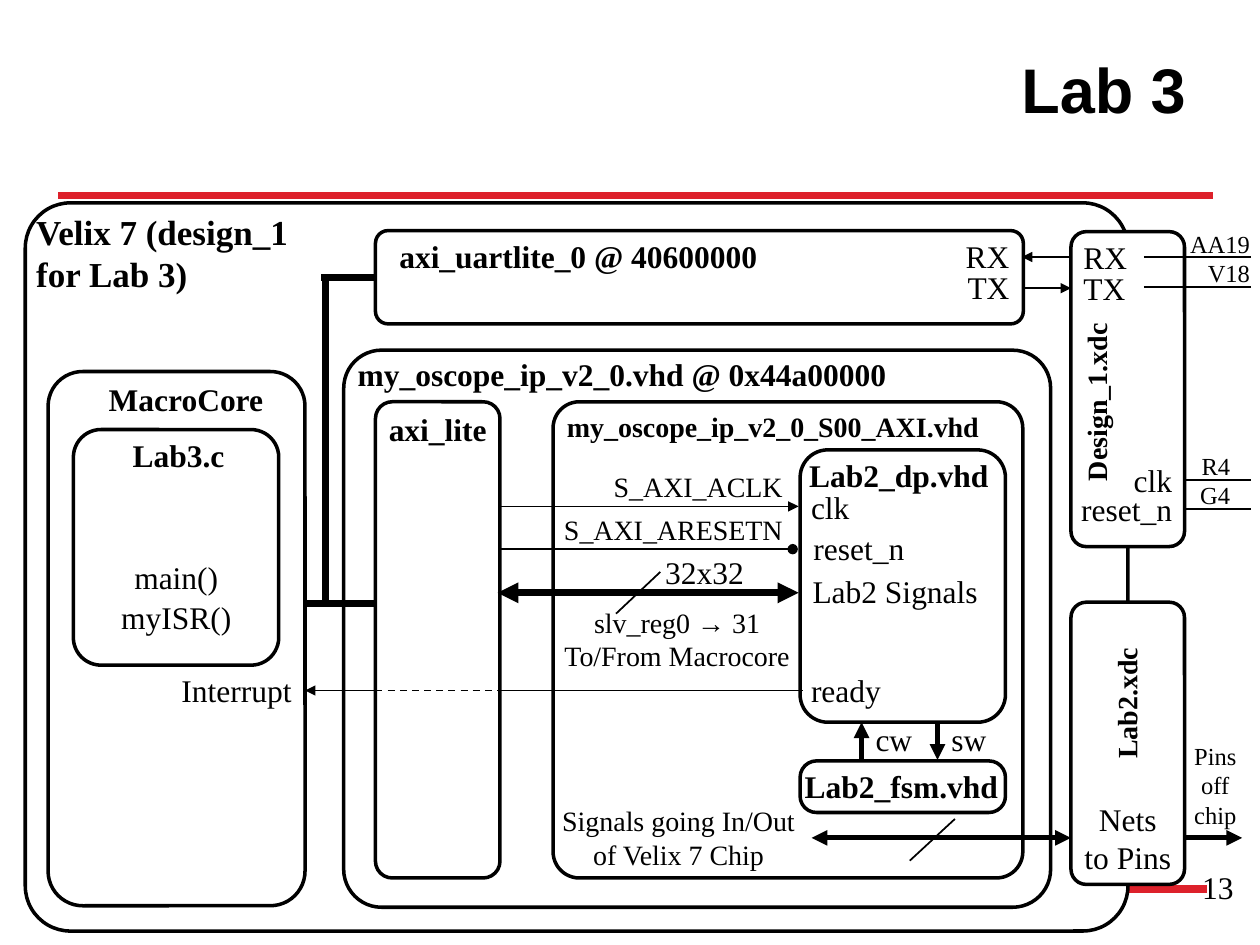
from collections import namedtuple

from pptx import Presentation
from pptx.dml.color import RGBColor
from pptx.enum.dml import MSO_LINE
from pptx.enum.shapes import MSO_CONNECTOR, MSO_SHAPE
from pptx.enum.text import MSO_ANCHOR, PP_ALIGN
from pptx.oxml.ns import qn
from pptx.util import Cm, Pt
from lxml.etree import SubElement

BLACK, WHITE, RED = "000000", "FFFFFF", "DD212B"
ALIGN = {"left": PP_ALIGN.LEFT, "center": PP_ALIGN.CENTER, "right": PP_ALIGN.RIGHT}
LABEL_HEIGHT = 1.02

# All box lengths are in centimetres
Box = namedtuple("Box", "left top width height")


def within(box, x, y, width, height):
    return Box(box.left + x, box.top + y, width, height)


def to_cm(*lengths):
    return [Cm(length) for length in lengths]


def color(hex_string):
    return RGBColor.from_string(hex_string)


def write(frame, text, size=18, bold=False, align="left", font="Times New Roman",
          anchor=MSO_ANCHOR.TOP):
    frame.word_wrap = True
    frame.vertical_anchor = anchor
    for index, line in enumerate(text.split("\n")):
        paragraph = frame.add_paragraph() if index else frame.paragraphs[0]
        paragraph.alignment = ALIGN[align]
        run = paragraph.add_run()
        run.text = line
        run.font.name, run.font.size, run.font.bold = font, Pt(size), bold
        run.font.color.rgb = color(BLACK)


def label(slide, box, x, y, width, text, height=LABEL_HEIGHT, rotation=0, **text_format):
    holder = slide.shapes.add_textbox(*to_cm(*within(box, x, y, width, height)))
    holder.rotation = rotation
    write(holder.text_frame, text, **text_format)


def block(slide, box, rounding=0.135, fill=None):
    outline = slide.shapes.add_shape(MSO_SHAPE.ROUNDED_RECTANGLE, *to_cm(*box))
    outline.adjustments[0] = rounding
    outline.shadow.inherit = False
    if fill:
        outline.fill.solid()
        outline.fill.fore_color.rgb = color(fill)
    else:
        outline.fill.background()
    outline.line.color.rgb = color(BLACK)
    outline.line.width = Pt(2)
    return outline


def wire(slide, box, x1, y1, x2, y2, weight=1, head=None, tail=None, dash=None, ink=BLACK):
    """Draw a line between two points relative to the box; head is at the start."""
    connector = slide.shapes.add_connector(MSO_CONNECTOR.STRAIGHT, *to_cm(
        box.left + x1, box.top + y1, box.left + x2, box.top + y2))
    connector.line.color.rgb = color(ink)
    connector.line.width = Pt(weight)
    if dash:
        connector.line.dash_style = dash
    line_xml = connector.line._get_or_add_ln()
    for tag, kind in (("a:headEnd", head), ("a:tailEnd", tail)):
        if kind:
            SubElement(line_xml, qn(tag), type=kind)
    SubElement(connector._element.spPr, qn("a:effectLst"))
    return connector


def draw_header(slide, box):
    title = slide.shapes.title
    title.left, title.top, title.width, title.height = to_cm(*within(box, 5.31, 0.2, 18.85, 3.18))
    write(title.text_frame, "Lab 3", size=36, bold=True, align="right", font="Arial",
          anchor=MSO_ANCHOR.MIDDLE)
    wire(slide, box, 1.17, 3.94, 24.46, 3.94, weight=4.5, ink=RED)
    wire(slide, box, 1.07, 17.93, 24.33, 17.93, weight=4.5, ink=RED)


def draw_chip(slide, box):
    block(slide, box, rounding=0.062, fill=WHITE)
    label(slide, box, -0.03, 0.03, 6.3, "Velix 7 (design_1 for Lab 3)", height=1.96,
          size=20, bold=True)


def draw_uart(slide, box):
    uart = block(slide, box)
    label(slide, box, 0.23, 0, 10, "axi_uartlite_0 @ 40600000", bold=True)
    for y, port in ((0, "RX"), (0.63, "TX")):
        label(slide, box, 11.56, y, 1.47, port, align="right")
    return uart


def draw_processor(slide, box, uart):
    block(slide, box)
    label(slide, box, 0.66, 0.05, 4.24, "MacroCore", bold=True, align="center")
    program = within(box, 0.51, 1.17, 4.14, 4.75)
    block(slide, program)
    label(slide, program, 0, 0, 4.24, "Lab3.c", bold=True, align="center")
    for y, function in ((2.46, "main()"), (3.27, "myISR()")):
        label(slide, program, 0.69, y, 2.77, function, align="center")
    label(slide, box, 2.39, 5.92, 2.77, "Interrupt", align="right")
    wire(slide, box, 5.2, 4.67, 6.6, 4.67, weight=4)
    wire(slide, box, 5.59, 4.67, 5.59, -1.9, weight=4)
    wire(slide, box, 5.51, -1.9, 6.6, -1.9, weight=4).end_connect(uart, 1)
    wire(slide, box, 5.18, 6.43, 15.21, 6.43, head="triangle")


def draw_peripheral(slide, box):
    block(slide, box, rounding=0.068)
    label(slide, box, 0.03, -0.03, 14.2, "my_oscope_ip_v2_0.vhd @ 0x44a00000", bold=True)
    draw_axi_lite(slide, within(box, 0.64, 1.04, 2.51, 9.6))
    draw_axi_slave(slide, within(box, 4.22, 1.04, 9.47, 9.6))


def draw_axi_lite(slide, box):
    block(slide, box, fill=WHITE)
    label(slide, box, 0, 0.05, box.width, "axi_lite", bold=True, align="center")
    wire(slide, box, 0, 5.82, box.width, 5.82, dash=MSO_LINE.DASH)


def draw_axi_slave(slide, box):
    block(slide, box, rounding=0.056)
    label(slide, box, 0.03, 0.03, 10.2, "my_oscope_ip_v2_0_S00_AXI.vhd", size=16, bold=True)
    for y, signal, end, tip in ((2.11, "S_AXI_ACLK", 4.95, "triangle"),
                                (2.97, "S_AXI_ARESETN", 4.83, "oval")):
        wire(slide, box, -1.07, y, end, y, tail=tip)
        label(slide, box, -0.53, y - 0.87, 5.41, signal, size=16, align="right")
    wire(slide, box, -1.12, 3.85, 4.95, 3.85, weight=4, head="triangle", tail="triangle")
    wire(slide, box, 1.27, 4.27, 2.16, 3.43)
    label(slide, box, 2.01, 2.92, 2.2, "32x32")
    label(slide, box, -0.18, 3.98, 5.36, "slv_reg0 → 31\nTo/From Macrocore", height=1.56,
          size=16, align="center")
    draw_datapath(slide, within(box, 4.98, 0.97, 4.14, 5.49))
    label(slide, box, -0.15, 7.98, 5.36, "Signals going In/Out of Velix 7 Chip",
          height=1.63, size=16, align="center")
    wire(slide, box, 5.21, 8.79, 10.44, 8.79, weight=3, head="triangle", tail="triangle")
    wire(slide, box, 7.19, 9.25, 8.1, 8.41)


def draw_datapath(slide, box):
    """Draw the datapath with the state machine under it."""
    block(slide, box)
    label(slide, box, -0.08, 0, box.width, "Lab2_dp.vhd", bold=True, align="center")
    for x, y, port in ((-0.03, 0.64, "clk"), (0.02, 1.47, "reset_n"),
                       (0, 2.34, "Lab2 Signals"), (-0.03, 4.34, "ready")):
        label(slide, box, x, y, 4.1, port)
    block(slide, within(box, 0, 6.27, box.width, 1.04), rounding=0.319)
    label(slide, box, -0.36, 6.27, 4.8, "Lab2_fsm.vhd", bold=True, align="center")
    for x, word, start, end in ((1.24, "cw", 6.25, 5.49), (2.77, "sw", 5.49, 6.25)):
        wire(slide, box, x, start, x, end, weight=3, tail="triangle")
        label(slide, box, x + 0.03, 5.33, 1.35, word)


def draw_design_pins(slide, box):
    block(slide, box, fill=WHITE)
    label(slide, box, -1.37, 2.97, 3.76, "Design_1.xdc", height=0.94, rotation=270,
          size=16, bold=True, align="center")
    for y, port in ((0, "RX"), (0.62, "TX")):
        label(slide, box, 0, y, 1.47, port)
    for y, port in ((4.5, "clk"), (5.08, "reset_n")):
        label(slide, box, -0.23, y, 2.52, port, align="right")
    for x, y, pins in ((1.8, -0.18, "AA19\nV18"), (1.4, 4.29, "R4\nG4")):
        label(slide, box, x, y, 2.06, pins, height=1.45, size=14, align="right")
    wire(slide, box, -0.99, 0.51, 0, 0.51, head="triangle")
    wire(slide, box, -0.99, 1.14, 0, 1.14, tail="triangle")
    for x, y in ((1.47, 0.51), (1.47, 1.12), (2.31, 5), (2.31, 5.59)):
        wire(slide, box, x, y, 3.62, y)


def draw_lab_pins(slide, box):
    block(slide, box, fill=WHITE)
    label(slide, box, -0.3, 1.57, 2.84, "Lab2.xdc", height=0.94, rotation=270,
          size=16, bold=True, align="center")
    label(slide, box, 0, 3.86, box.width, "Nets to Pins", height=1.8, align="center")
    label(slide, box, 2.11, 2.67, 1.6, "Pins off\nchip", height=2.06, size=14, align="center")
    wire(slide, box, box.width, 4.75, 3.45, 4.75, weight=3, tail="triangle")


def main():
    presentation = Presentation()
    presentation.slide_width, presentation.slide_height = to_cm(25.4, 19.05)
    slide = presentation.slides.add_slide(presentation.slide_layouts[5])
    page = Box(0, 0, 25.4, 19.05)
    draw_header(slide, page)
    draw_chip(slide, Box(0.51, 4.09, 22.23, 14.68))
    uart = draw_uart(slide, Box(7.57, 4.65, 13.06, 1.88))
    draw_processor(slide, Box(0.97, 7.49, 5.18, 10.77), uart)
    draw_peripheral(slide, Box(6.93, 7.06, 14.25, 11.23))
    draw_design_pins(slide, Box(21.59, 4.67, 2.29, 6.35))
    draw_lab_pins(slide, Box(21.59, 12.14, 2.29, 5.69))
    label(slide, page, 19.2, 17.37, 5.92, "13", height=1.32, align="right")
    presentation.save("out.pptx")


if __name__ == "__main__":
    main()
